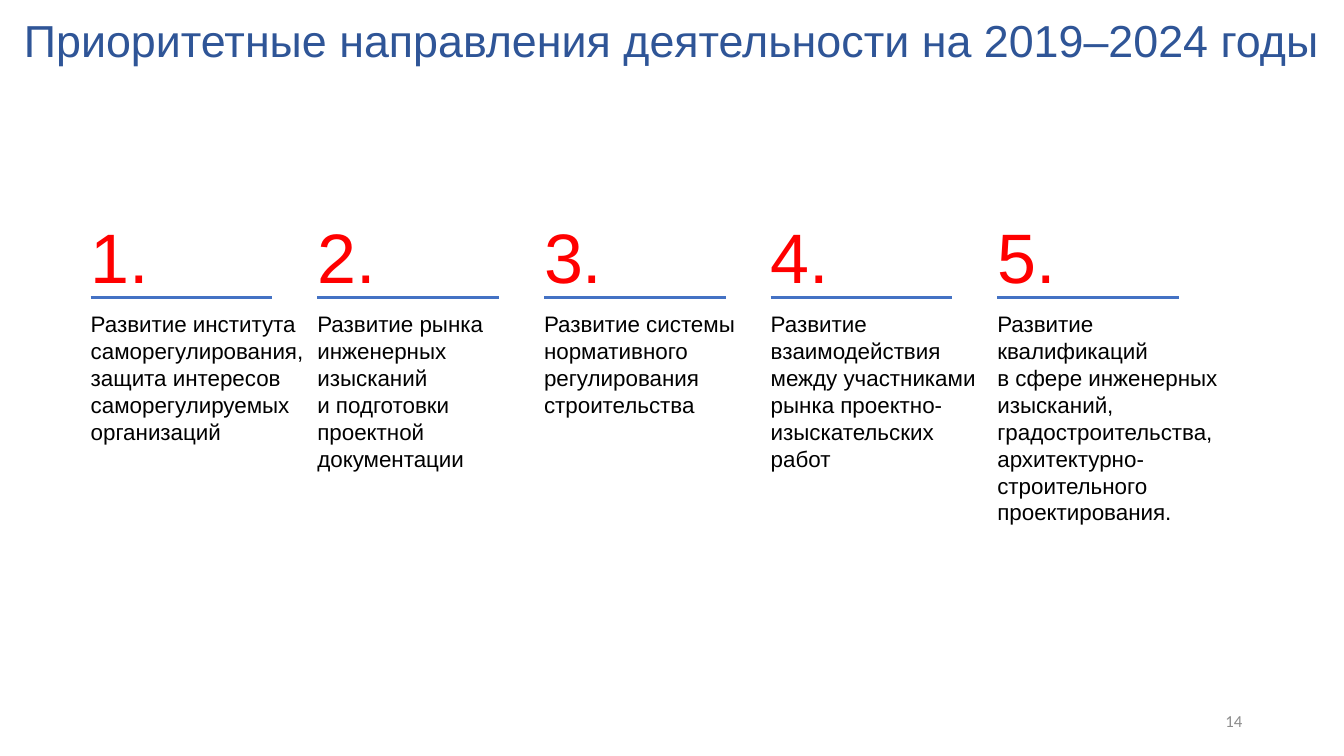
from lxml import etree
from pptx import Presentation
from pptx.dml.color import RGBColor
from pptx.enum.shapes import MSO_CONNECTOR
from pptx.enum.text import MSO_ANCHOR, PP_ALIGN
from pptx.oxml.ns import qn
from pptx.util import Inches, Pt

STRAIGHT = MSO_CONNECTOR.STRAIGHT
TOP, MIDDLE, BOTTOM = MSO_ANCHOR.TOP, MSO_ANCHOR.MIDDLE, MSO_ANCHOR.BOTTOM
LEFT, CENTER, RIGHT = PP_ALIGN.LEFT, PP_ALIGN.CENTER, PP_ALIGN.RIGHT

START, STEP = 0.9, 2.248
RULE_Y, RULE_W = 2.95, 1.8
GOALS = [
    (2.19, ["Развитие института", "саморегулирования, защита интересов",
            "саморегулируемых", "организаций"]),
    (1.8, ["Развитие рынка", "инженерных", "изысканий", "и подготовки",
           "проектной", "документации"]),
    (1.93, ["Развитие системы", "нормативного", "регулирования",
            "строительства"]),
    (2.25, ["Развитие", "взаимодействия", "между участниками",
            "рынка проектно-", "изыскательских", "работ"]),
    (2.4, ["Развитие", "квалификаций", "в сфере инженерных", "изысканий,",
           "градостроительства,", "архитектурно-", "строительного",
           "проектирования."]),
]


def color(code):
    return RGBColor.from_string(code)


def add_text(slide, box, lines, size, code, font="Arial", align=LEFT,
             anchor=TOP, inset=True):
    frame = slide.shapes.add_textbox(*map(Inches, box)).text_frame
    frame.word_wrap = True
    frame.vertical_anchor = anchor
    if not inset:
        frame.margin_left = frame.margin_right = 0
        frame.margin_top = frame.margin_bottom = 0
    for index, line in enumerate(lines):
        para = frame.add_paragraph() if index else frame.paragraphs[0]
        para.alignment = align
        run = para.add_run()
        run.text = line
        run.font.name = font
        run.font.size = Pt(size)
        run.font.color.rgb = color(code)
    return frame


def add_rule(slide, left):
    y = Inches(RULE_Y)
    rule = slide.shapes.add_connector(
        STRAIGHT, Inches(left), y, Inches(left + RULE_W), y)
    rule.line.color.rgb = color("4472C4")
    rule.line.width = Pt(1.75)
    etree.SubElement(rule._element.spPr, qn("a:effectLst"))


def add_goal(slide, index, width, lines):
    left = START + index * STEP
    add_text(slide, (left, 2.27, 1.2, 0.68), [f"{index + 1}."], 50, "FF0000",
             anchor=BOTTOM, inset=False)
    add_rule(slide, left)
    add_text(slide, (left, 3.08, width, 1.35), lines, 16, "000000",
             inset=False)


def add_title(slide):
    frame = add_text(slide, (0.08, 0.14, 13.17, 0.6),
                     ["Приоритетные направления деятельности на 2019–2024 годы"],
                     32, "2F5597", align=CENTER)
    para = frame.paragraphs[0]
    para.line_spacing = Pt(34)
    para.space_before = Pt(10)


def main():
    deck = Presentation()
    deck.slide_width = Inches(13.33)
    deck.slide_height = Inches(7.5)
    slide = deck.slides.add_slide(deck.slide_layouts[6])
    add_title(slide)
    for index, (width, lines) in enumerate(GOALS):
        add_goal(slide, index, width, lines)
    add_text(slide, (9.42, 6.95, 3, 0.4), ["14"], 12, "8C8C8C",
             font="Calibri", align=RIGHT, anchor=MIDDLE)
    deck.save("out.pptx")


if __name__ == "__main__":
    main()
